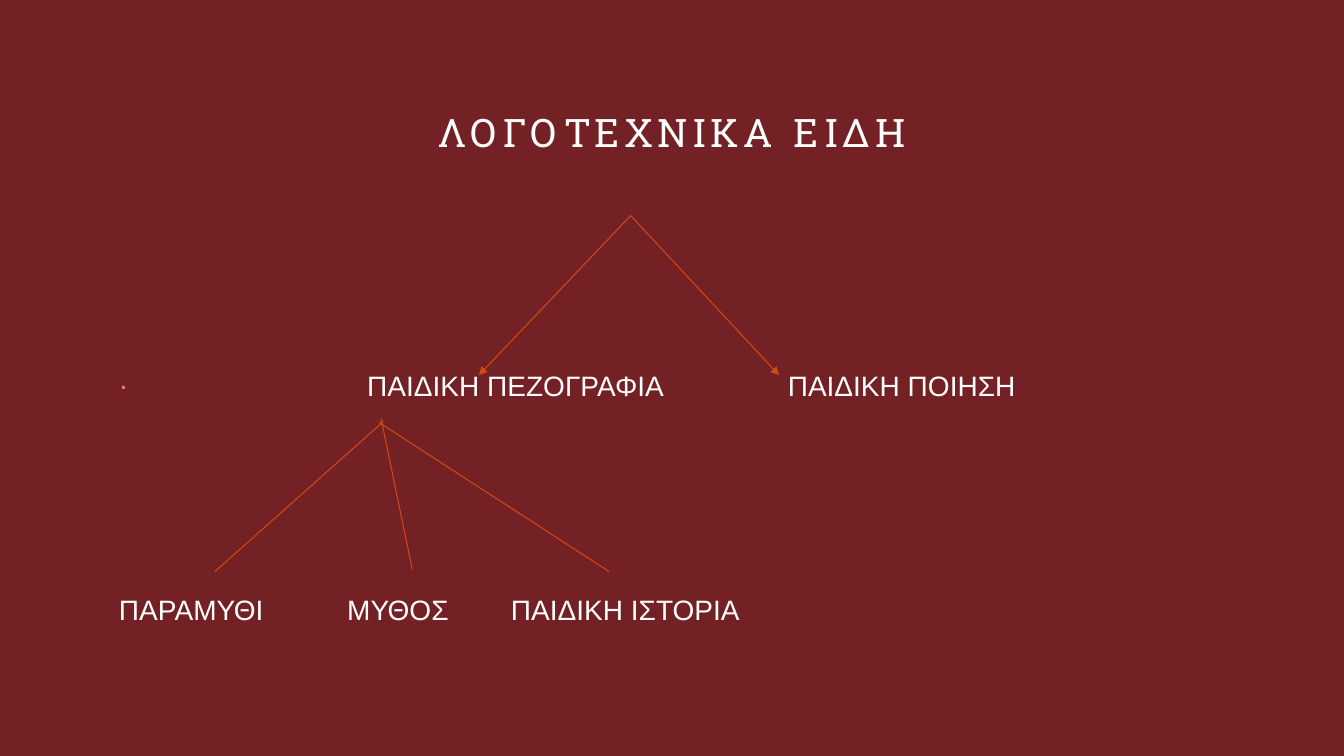
from dataclasses import dataclass

from lxml import etree
from pptx import Presentation
from pptx import util as u
from pptx.dml import color
from pptx.enum import shapes, text
from pptx.oxml import ns

WHITE, MAROON, ORANGE, SALMON = "FFFFFF", "732124", "D34817", "EF8C6A"
LEFT = 85
GENRE_TOP, KIND_TOP = 263.4, 423.4


@dataclass(frozen=True)
class Label:
    words: str
    left: float
    top: float
    width: float
    height: float = 24
    font: str = "Arial"
    size: float = 20
    spacing: float = 0
    align: text.PP_ALIGN = text.PP_ALIGN.LEFT
    bullet_indent: float = 0


@dataclass(frozen=True)
class Branch:
    start: tuple[float, float]
    end: tuple[float, float]
    arrow: bool = False


LABELS = [
    Label("ΛΟΓΟΤΕΧΝΙΚΑ ΕΙΔΗ", LEFT, 77.7, 790, 52, "Roboto Slab", 28, 4,
          text.PP_ALIGN.CENTER),
    Label("ΠΑΙΔΙΚΗ ΠΕΖΟΓΡΑΦΙΑ", LEFT, GENRE_TOP, 410, bullet_indent=177.3),
    Label("ΠΑΙΔΙΚΗ ΠΟΙΗΣΗ", 562.7, GENRE_TOP, 190),
    Label("ΠΑΡΑΜΥΘΙ", LEFT, KIND_TOP, 130),
    Label("ΜΥΘΟΣ", 248, KIND_TOP, 100),
    Label("ΠΑΙΔΙΚΗ ΙΣΤΟΡΙΑ", 365, KIND_TOP, 190),
]

BRANCHES = [
    Branch((450.5, 154), (342, 268), True),
    Branch((450.5, 154), (556.5, 268), True),
    Branch((274, 301), (153.3, 408.5)),
    Branch((272.2, 299), (294.5, 406.8)),
    Branch((270.7, 301.7), (435, 408.2)),
]


def rgb(value: str) -> color.RGBColor:
    return color.RGBColor.from_string(value)


def apply(target, formats: dict) -> None:
    for name, value in formats.items():
        setattr(target, name, value)


def add_bullet(paragraph, indent: float) -> None:
    properties = paragraph._p.get_or_add_pPr()
    properties.set("marL", str(u.Pt(indent)))
    properties.set("indent", str(-u.Pt(indent)))
    bullet_color = etree.SubElement(properties, ns.qn("a:buClr"))
    etree.SubElement(bullet_color, ns.qn("a:srgbClr"), val=SALMON)
    etree.SubElement(properties, ns.qn("a:buFont"), typeface="Arial")
    etree.SubElement(properties, ns.qn("a:buChar"), char="·")


def draw_label(slide, label: Label) -> None:
    box = slide.shapes.add_textbox(
        u.Pt(label.left), u.Pt(label.top), u.Pt(label.width), u.Pt(label.height))
    apply(box.text_frame, {
        "word_wrap": True,
        "margin_left": 0, "margin_right": 0,
        "margin_top": 0, "margin_bottom": 0,
        "vertical_anchor": text.MSO_ANCHOR.TOP,
    })
    paragraph = box.text_frame.paragraphs[0]
    paragraph.alignment = label.align
    if label.bullet_indent:
        add_bullet(paragraph, label.bullet_indent)
    run = paragraph.add_run()
    run.text = label.words
    apply(run.font, {"name": label.font, "size": u.Pt(label.size)})
    run.font.color.rgb = rgb(WHITE)
    if label.spacing:
        run.font._element.set("spc", str(round(label.spacing * 100)))


def draw_branch(slide, branch: Branch) -> None:
    connector = slide.shapes.add_connector(
        shapes.MSO_CONNECTOR.STRAIGHT,
        *(u.Pt(length) for length in branch.start + branch.end))
    connector.line.width = u.Pt(0.75)
    connector.line.color.rgb = rgb(ORANGE)
    if branch.arrow:
        etree.SubElement(connector.line._get_or_add_ln(), ns.qn("a:tailEnd"),
                         type="triangle")
    etree.SubElement(connector._element.spPr, ns.qn("a:effectLst"))


def main() -> None:
    presentation = Presentation()
    apply(presentation, {"slide_width": u.Pt(960), "slide_height": u.Pt(540)})
    slide = presentation.slides.add_slide(presentation.slide_layouts[6])
    slide.background.fill.solid()
    slide.background.fill.fore_color.rgb = rgb(MAROON)
    for label in LABELS:
        draw_label(slide, label)
    for branch in BRANCHES:
        draw_branch(slide, branch)
    presentation.save("out.pptx")


if __name__ == "__main__":
    main()
